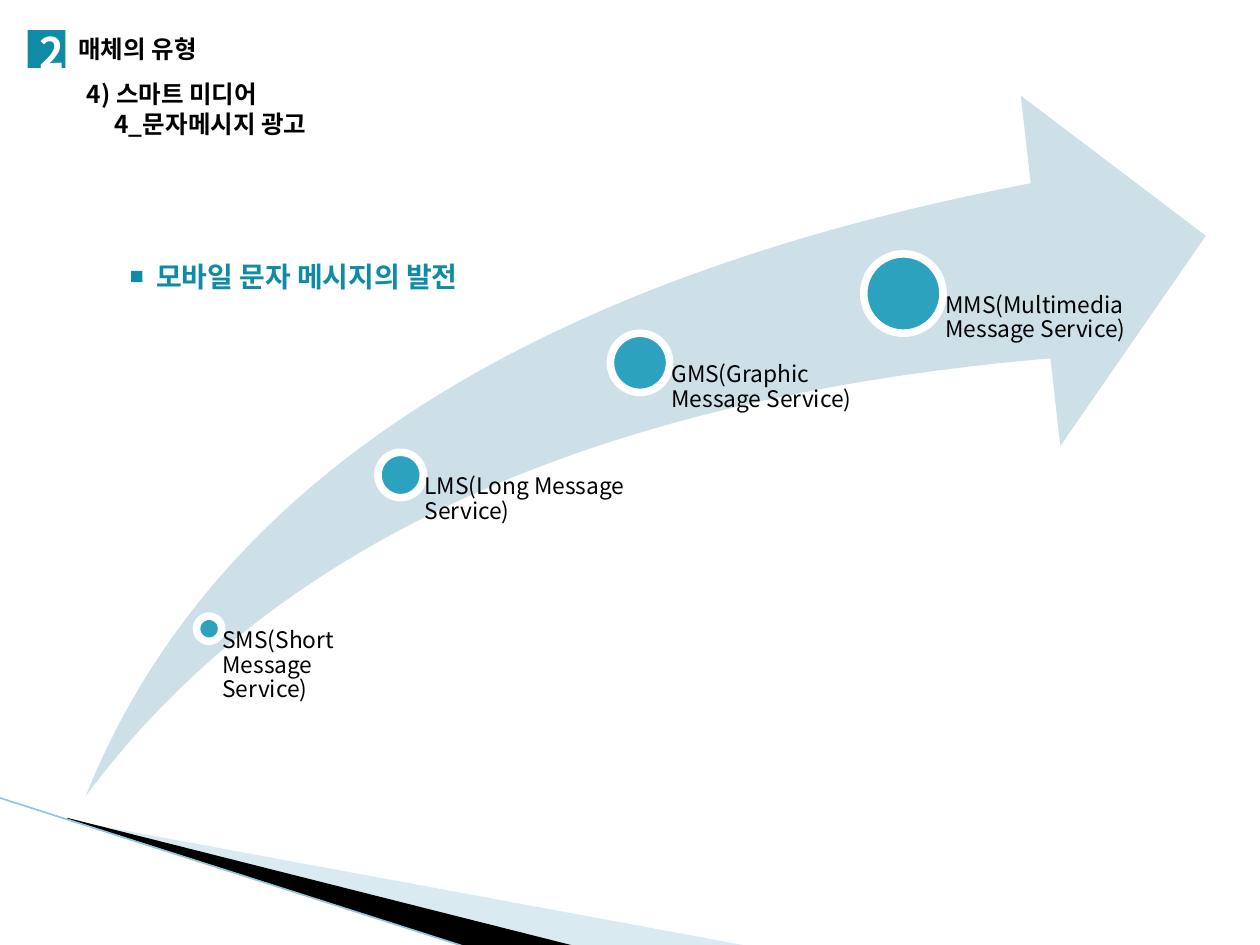
from lxml import etree
from pptx import Presentation
from pptx.dml.color import RGBColor
from pptx.enum.shapes import MSO_CONNECTOR, MSO_SHAPE
from pptx.enum.text import MSO_ANCHOR, MSO_AUTO_SIZE, PP_ALIGN
from pptx.oxml.ns import qn
from pptx.util import Inches, Pt

LEFT = PP_ALIGN.LEFT
TOP = MSO_ANCHOR.TOP
NO_FIT = MSO_AUTO_SIZE.NONE
STRAIGHT = MSO_CONNECTOR.STRAIGHT
RECTANGLE = MSO_SHAPE.RECTANGLE
OVAL = MSO_SHAPE.OVAL
SWOOSH = MSO_SHAPE.SWOOSH_ARROW

BLACK = RGBColor(0x00, 0x00, 0x00)
WHITE = RGBColor(0xFF, 0xFF, 0xFF)
TEAL = RGBColor(0x10, 0x8B, 0xA4)
MARKER_BLUE = RGBColor(0x2D, 0xA2, 0xBF)
ARROW_BLUE = RGBColor(0xCD, 0xE0, 0xE8)
WEDGE_BLUE = RGBColor(0xA0, 0xCB, 0xDC)
EDGE_BLUE = RGBColor(0x97, 0xC5, 0xD8)

FONT = "Noto Sans CJK KR"
HEADING = {"size": Pt(14), "bold": True}
TOPIC = {"size": Pt(16), "bold": True}
NUMBER = {"size": Pt(24), "bold": True}
LABEL = {"size": Pt(13), "bold": False}
NO_INSETS = (0, 0, 0, 0)
BOX_INSETS = (0.1, 0.05, 0.1, 0.05)
LABEL_BOTTOM = 6.31

STAGES = [
    ("SMS(Short Message Service)", 1.66, 4.99, 0.2, 1.52),
    ("LMS(Long Message Service)", 3.18, 3.77, 0.36, 1.87),
    ("GMS(Graphic Message Service)", 5.08, 2.88, 0.47, 1.87),
    ("MMS(Multimedia Message Service)", 7.17, 2.33, 0.63, 1.87),
]
PALE_WEDGE = [(0.55, 6.51), (5.95, 7.51), (4.56, 7.51), (0.55, 6.5)]
BLACK_WEDGE = [(0.53, 6.49), (4.57, 7.51), (3.72, 7.52), (0.54, 6.5)]


def inches(values):
    return [Inches(value) for value in values]


def write_text(frame, lines, style, color, insets=BOX_INSETS, wrap=True):
    left, top, right, bottom = inches(insets)
    settings = {
        "margin_left": left, "margin_top": top,
        "margin_right": right, "margin_bottom": bottom,
        "word_wrap": wrap, "vertical_anchor": TOP, "auto_size": NO_FIT,
    }
    for name, value in settings.items():
        setattr(frame, name, value)
    for index, line in enumerate(lines):
        paragraph = frame.add_paragraph() if index else frame.paragraphs[0]
        paragraph.alignment = LEFT
        run = paragraph.add_run()
        run.text = line
        for name, value in {**style, "name": FONT}.items():
            setattr(run.font, name, value)
        run.font.color.rgb = color
        east_asian = etree.SubElement(run.font._element, qn("a:ea"))
        east_asian.set("typeface", FONT)


def add_text(slide, box, lines, style, color, **options):
    frame = slide.shapes.add_textbox(*inches(box)).text_frame
    write_text(frame, lines, style, color, **options)
    return frame


def paint(shape, fill):
    shape.shadow.inherit = False
    shape.fill.solid()
    shape.fill.fore_color.rgb = fill
    shape.line.fill.background()


def add_figure(slide, kind, box, fill):
    figure = slide.shapes.add_shape(kind, *inches(box))
    paint(figure, fill)
    return figure


def add_wedge(slide, points, fill, opacity=100):
    start, *rest = [inches(point) for point in points]
    builder = slide.shapes.build_freeform(*start)
    builder.add_line_segments(rest)
    wedge = builder.convert_to_shape()
    paint(wedge, fill)
    if opacity < 100:
        color = wedge._element.spPr.find(f".//{qn('a:srgbClr')}")
        etree.SubElement(color, qn("a:alpha")).set("val", str(opacity * 1000))


def add_edge(slide, start, end):
    edge = slide.shapes.add_connector(STRAIGHT, *inches(start + end))
    edge.line.color.rgb = EDGE_BLUE
    edge.line.width = Pt(0.95)
    etree.SubElement(edge._element.spPr, qn("a:effectLst"))


def add_stage(slide, name, x, y, diameter, width):
    radius = diameter / 2
    marker = add_figure(
        slide, OVAL, (x - radius, y - radius, diameter, diameter), MARKER_BLUE)
    marker.line.color.rgb = WHITE
    marker.line.width = Pt(4.33)
    frame = add_text(
        slide, (x, y, width, LABEL_BOTTOM - y), [name], LABEL, BLACK,
        insets=(diameter * 0.53, 0, 0, 0))
    frame.paragraphs[0].line_spacing = 0.9


def add_heading(slide):
    title = slide.shapes.title
    title.left, title.top, title.width, title.height = inches(
        (0.52, 0.22, 2.71, 0.34))
    write_text(title.text_frame, ["매체의 유형"], HEADING, BLACK)
    add_figure(slide, RECTANGLE, (0.22, 0.24, 0.3, 0.3), TEAL)
    add_text(slide, (0.31, 0.21, 0.19, 0.4), ["2"], NUMBER, WHITE,
             insets=NO_INSETS)
    section = add_text(
        slide, (0.59, 0.58, 2.04, 0.57),
        ["4) 스마트 미디어", "4_문자메시지 광고"], HEADING, BLACK, wrap=False)
    indent = section.paragraphs[1]._p.get_or_add_pPr()
    indent.set("marL", str(Inches(0.22)))
    indent.set("indent", "0")


def main():
    presentation = Presentation()
    presentation.slide_width = Inches(10)
    presentation.slide_height = Inches(7.5)
    slide = presentation.slides.add_slide(presentation.slide_layouts[5])

    add_wedge(slide, PALE_WEDGE, WEDGE_BLUE, opacity=40)
    add_wedge(slide, BLACK_WEDGE, BLACK)
    add_edge(slide, (-0.01, 6.33), (3.71, 7.52))

    add_text(slide, (1.14, 2.01, 4.65, 0.37),
             ["모바일 문자 메시지의 발전"], TOPIC, TEAL)
    add_figure(slide, RECTANGLE, (1.04, 2.15, 0.09, 0.09), TEAL)

    growth = add_figure(slide, SWOOSH, (0.68, 0.76, 8.89, 5.56), ARROW_BLUE)
    growth.adjustments[0] = 0.25
    growth.adjustments[1] = 0.25
    for stage in STAGES:
        add_stage(slide, *stage)

    add_heading(slide)
    presentation.save("out.pptx")


if __name__ == "__main__":
    main()
